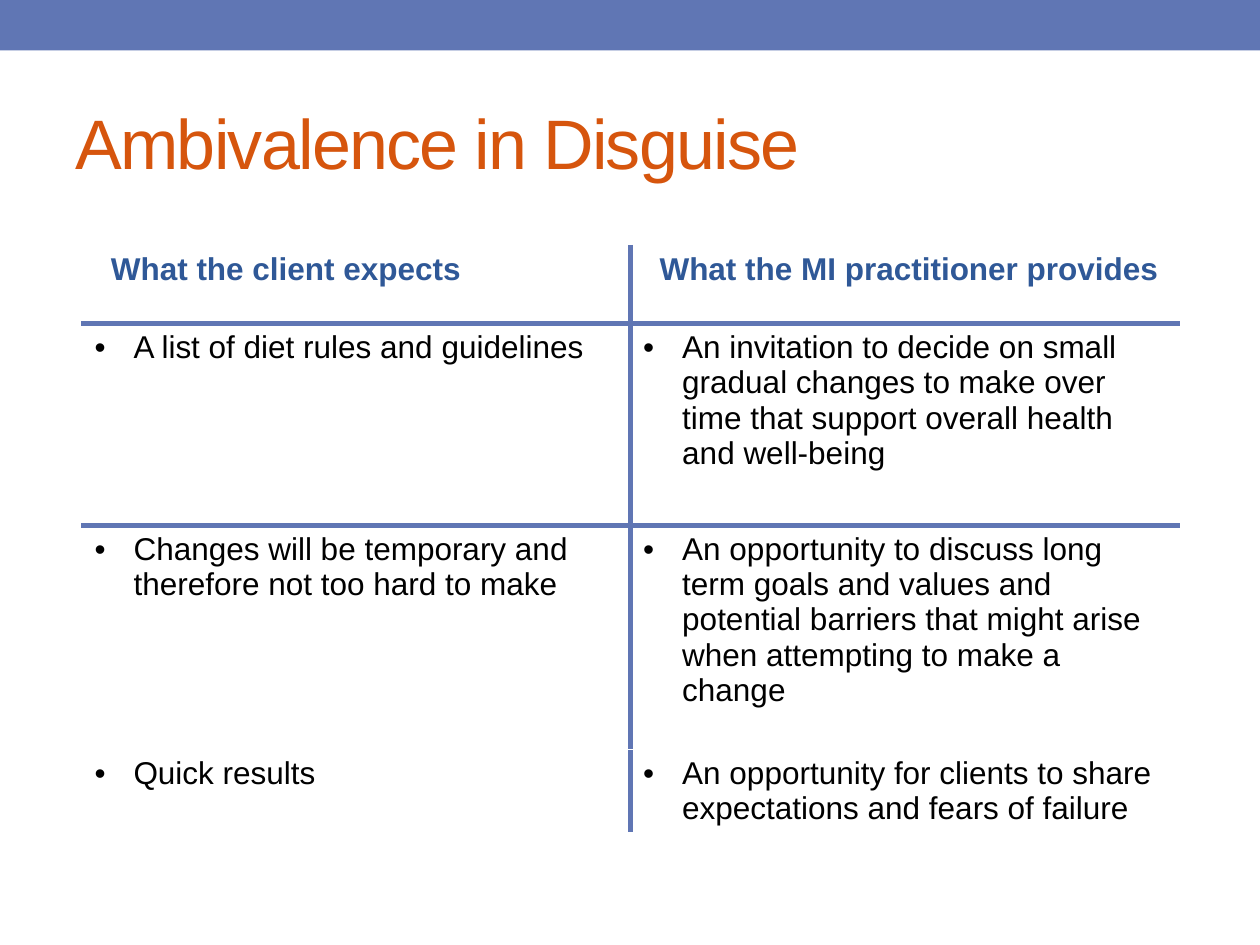
from dataclasses import dataclass

import pptx
import pptx.dml.color
import pptx.enum.shapes
import pptx.enum.text
import pptx.oxml
import pptx.oxml.ns
import pptx.util
from pptx.util import Inches


@dataclass(frozen=True)
class Theme:
    font: str = "Arial"
    accent: str = "6076B4"
    title: str = "D6550D"
    heading: str = "2F5897"
    body: str = "000000"
    title_size: int = 40
    text_size: int = 18
    rule_width: int = 3


THEME = Theme()
COLUMN_WIDTH = 4.355
ROW_HEIGHTS = (0.62, 1.6, 1.78, 0.66)
COMPARISON = (
    ("What the client expects", "What the MI practitioner provides"),
    ("A list of diet rules and guidelines",
     "An invitation to decide on small gradual changes to make over time "
     "that support overall health and well-being"),
    ("Changes will be temporary and therefore not too hard to make",
     "An opportunity to discuss long term goals and values and potential "
     "barriers that might arise when attempting to make a change"),
    ("Quick results",
     "An opportunity for clients to share expectations and fears of failure"),
)


def rgb(color):
    return pptx.dml.color.RGBColor.from_string(color)


def apply(target, values):
    for name, value in values.items():
        setattr(target, name, value)


def write_text(paragraph, text, size, color, bold=False):
    run = paragraph.add_run()
    run.text = text
    apply(run.font, {"name": THEME.font, "size": pptx.util.Pt(size), "bold": bold})
    run.font.color.rgb = rgb(color)
    return run


def add_top_band(slide, width):
    band = slide.shapes.add_shape(
        pptx.enum.shapes.MSO_SHAPE.RECTANGLE, 0, 0, width, Inches(0.4))
    band.shadow.inherit = False
    band.fill.solid()
    band.fill.fore_color.rgb = rgb(THEME.accent)
    band.line.fill.background()


def add_title(slide, text):
    title = slide.shapes.title
    apply(title, {"left": Inches(0.5), "top": Inches(0.58),
                  "width": Inches(9), "height": Inches(1.08)})
    apply(title.text_frame, {
        "vertical_anchor": pptx.enum.text.MSO_ANCHOR.MIDDLE, "word_wrap": True})
    paragraph = title.text_frame.paragraphs[0]
    paragraph.alignment = pptx.enum.text.PP_ALIGN.LEFT
    run = write_text(paragraph, text, THEME.title_size, THEME.title)
    run.font._element.set("spc", "-100")


def set_indent(paragraph, left, first=0, bullet=None):
    properties = paragraph._p.get_or_add_pPr()
    properties.set("marL", str(Inches(left)))
    properties.set("indent", str(Inches(first)))
    if bullet:
        properties.append(pptx.oxml.parse_xml(
            f'<a:buFont {pptx.oxml.ns.nsdecls("a")} typeface="{THEME.font}"/>'))
        properties.append(pptx.oxml.parse_xml(
            f'<a:buChar {pptx.oxml.ns.nsdecls("a")} char="{bullet}"/>'))


def add_borders(cell, sides):
    """Draw the given sides, in the order L, R, T, B."""
    for side in sides:
        cell._tc.get_or_add_tcPr().append(pptx.oxml.parse_xml(
            f'<a:ln{side} {pptx.oxml.ns.nsdecls("a")} '
            f'w="{pptx.util.Pt(THEME.rule_width)}"><a:solidFill>'
            f'<a:srgbClr val="{THEME.accent}"/></a:solidFill></a:ln{side}>'))


def fill_cell(cell, text, row, column):
    # One rule between the columns, one under the headings
    add_borders(cell, ("R" if column == 0 else "L") + {0: "B", 1: "T"}.get(row, ""))
    cell.fill.background()
    paragraph = cell.text_frame.paragraphs[0]
    if row == 0:
        set_indent(paragraph, 0.13)
        write_text(paragraph, text, THEME.text_size, THEME.heading, bold=True)
    else:
        set_indent(paragraph, 0.31, -0.31, "•")
        write_text(paragraph, text, THEME.text_size, THEME.body)


def add_comparison(slide, rows):
    columns = len(rows[0])
    table = slide.shapes.add_table(
        len(rows), columns, Inches(0.65), Inches(1.95),
        Inches(COLUMN_WIDTH * columns), Inches(sum(ROW_HEIGHTS))).table
    apply(table, {"first_row": False, "horz_banding": False})
    for column in table.columns:
        column.width = Inches(COLUMN_WIDTH)
    for row, (height, texts) in enumerate(zip(ROW_HEIGHTS, rows)):
        table.rows[row].height = Inches(height)
        for column, text in enumerate(texts):
            fill_cell(table.cell(row, column), text, row, column)


def main():
    deck = pptx.Presentation()
    apply(deck, {"slide_width": Inches(10), "slide_height": Inches(7.5)})
    slide = deck.slides.add_slide(deck.slide_layouts.get_by_name("Title Only"))
    add_top_band(slide, deck.slide_width)
    add_title(slide, "Ambivalence in Disguise")
    add_comparison(slide, COMPARISON)
    deck.save("out.pptx")


if __name__ == "__main__":
    main()
